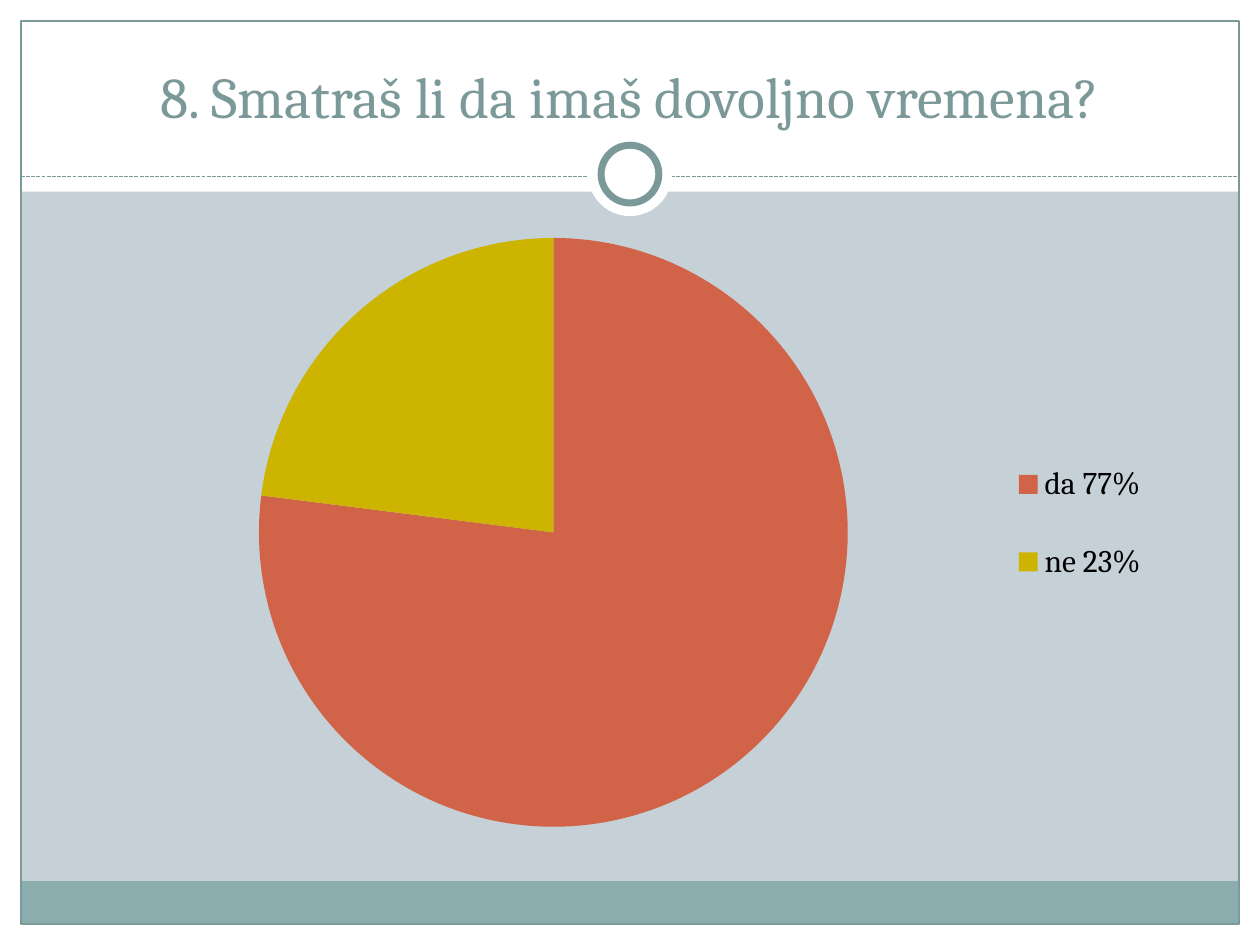
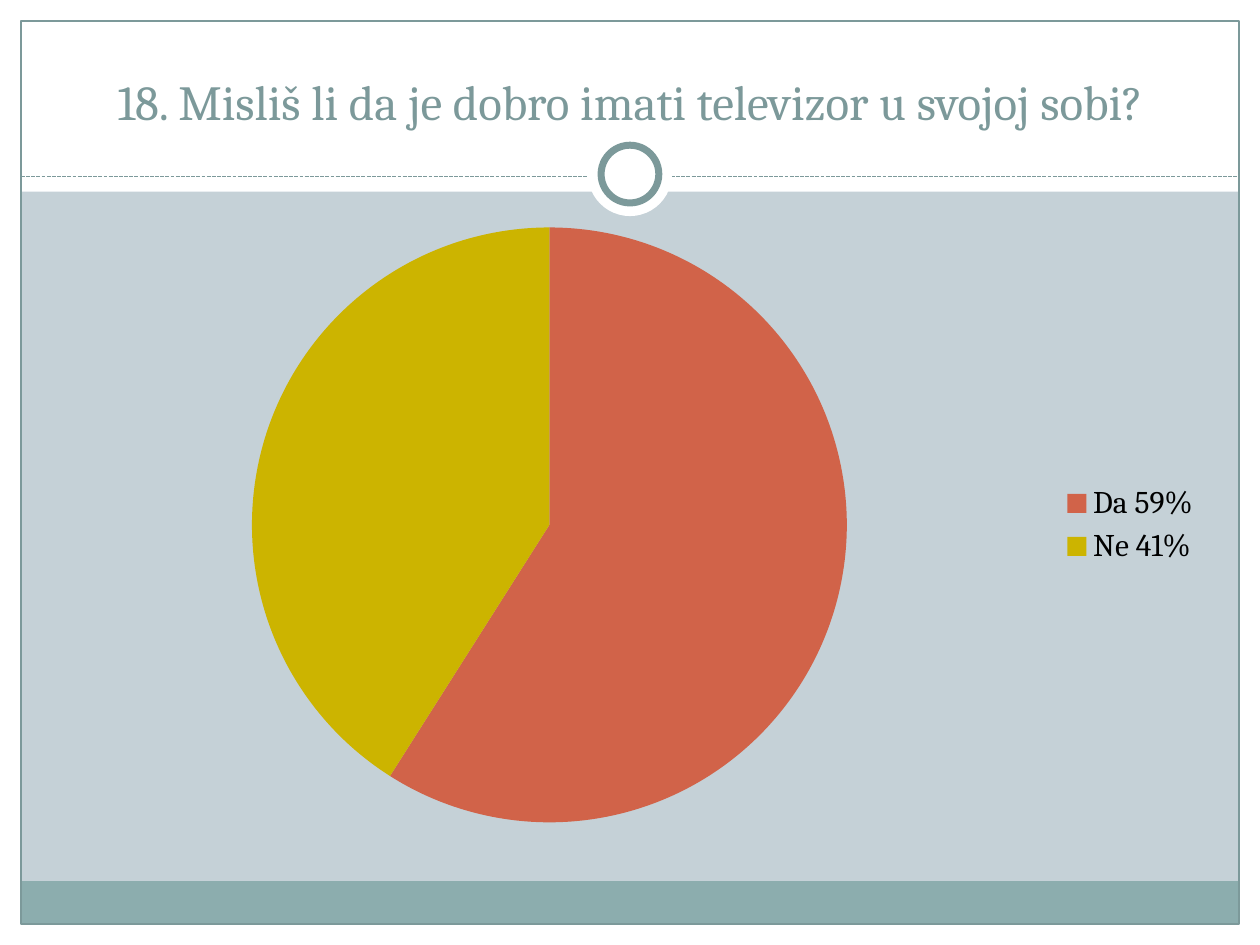
from dataclasses import dataclass
from typing import Optional

from lxml import etree
from pptx import Presentation
from pptx.chart.data import CategoryChartData
from pptx.dml.color import RGBColor
from pptx.enum.chart import XL_CHART_TYPE, XL_LEGEND_POSITION
from pptx.enum.dml import MSO_LINE
from pptx.enum.shapes import MSO_CONNECTOR, MSO_SHAPE
from pptx.enum.text import MSO_ANCHOR, MSO_AUTO_SIZE, PP_ALIGN
from pptx.oxml import parse_xml
from pptx.oxml.ns import nsdecls, qn
from pptx.slide import Slide
from pptx.util import Pt

RECTANGLE = MSO_SHAPE.RECTANGLE
OVAL = MSO_SHAPE.OVAL
STRAIGHT = MSO_CONNECTOR.STRAIGHT
SHORT_DASH = MSO_LINE.SQUARE_DOT
PIE = XL_CHART_TYPE.PIE
RIGHT = XL_LEGEND_POSITION.RIGHT
BOTTOM = MSO_ANCHOR.BOTTOM
CENTER = PP_ALIGN.CENTER
NO_AUTOFIT = MSO_AUTO_SIZE.NONE

BLACK = RGBColor(0x00, 0x00, 0x00)
WHITE = RGBColor(0xFF, 0xFF, 0xFF)
BACKGROUND = RGBColor(0xC5, 0xD1, 0xD7)
BAND = RGBColor(0x8C, 0xAD, 0xAE)
ACCENT = RGBColor(0x7C, 0x99, 0x9A)
SLICE_COLORS = (RGBColor(0xD1, 0x63, 0x49), RGBColor(0xCC, 0xB4, 0x00))

FONT = "Cambria"
WIDTH, HEIGHT = 720, 540
MARGIN = 12
HEADER_HEIGHT = 109.5
RULE_TOP = 101
TITLE_ONLY = 5


@dataclass(frozen=True)
class Area:
    left: float
    top: float
    width: float
    height: float


@dataclass(frozen=True)
class Decoration:
    kind: MSO_SHAPE
    area: Area
    fill: Optional[RGBColor] = None
    line_width: float = 0


@dataclass(frozen=True)
class Question:
    title: str
    title_size: int
    answers: dict[str, int]
    chart: Area
    pie: Area
    legend: Optional[Area] = None


TITLE_AREA = Area(24, 18, 672, 60)
INNER_WIDTH = WIDTH - 2 * MARGIN
INNER_HEIGHT = HEIGHT - 2 * MARGIN

FRAME = (
    Decoration(RECTANGLE, Area(0, HEIGHT - MARGIN, WIDTH, MARGIN), WHITE),
    Decoration(RECTANGLE, Area(0, 0, WIDTH, HEADER_HEIGHT), WHITE),
    Decoration(RECTANGLE, Area(0, 0, MARGIN, HEIGHT), WHITE),
    Decoration(RECTANGLE, Area(WIDTH - MARGIN, 0, MARGIN, HEIGHT), WHITE),
    Decoration(RECTANGLE, Area(MARGIN, 503.5, INNER_WIDTH, 24.5), BAND),
    Decoration(RECTANGLE, Area(MARGIN, MARGIN, INNER_WIDTH, INNER_HEIGHT), None, 0.75),
)
RING = (
    Decoration(OVAL, Area(336, 75.5, 48, 48), WHITE),
    Decoration(OVAL, Area(343.5, 83, 33, 33), WHITE, 4),
)

QUESTIONS = (
    Question(
        "8. Smatraš li da imaš dovoljno vremena?", 33,
        {"da 77%": 77, "ne 23%": 23},
        Area(36, 126, 648, 356.5),
        Area(148, 136, 336.5, 336.5),
        Area(576, 243, 82, 112),
    ),
    Question(
        "18. Misliš li da je dobro imati televizor u svojoj sobi?", 28,
        {"Da 59%": 59, "Ne 41%": 41},
        Area(24, 120, 669.5, 360),
        Area(144, 130, 340, 340),
    ),
)


def points(area: Area) -> tuple[Pt, Pt, Pt, Pt]:
    return Pt(area.left), Pt(area.top), Pt(area.width), Pt(area.height)


def draw_decoration(page: Slide, decoration: Decoration) -> None:
    shape = page.shapes.add_shape(decoration.kind, *points(decoration.area))
    shape.shadow.inherit = False
    if decoration.fill is None:
        shape.fill.background()
    else:
        shape.fill.solid()
        shape.fill.fore_color.rgb = decoration.fill
    if decoration.line_width:
        shape.line.color.rgb = ACCENT
        shape.line.width = Pt(decoration.line_width)
    else:
        shape.line.fill.background()


def draw_rule(page: Slide) -> None:
    rule = page.shapes.add_connector(
        STRAIGHT, Pt(MARGIN), Pt(RULE_TOP), Pt(WIDTH - MARGIN), Pt(RULE_TOP))
    rule.line.color.rgb = ACCENT
    rule.line.width = Pt(0.75)
    rule.line.dash_style = SHORT_DASH
    etree.SubElement(rule.element.spPr, qn("a:effectLst"))


def draw_title(page: Slide, question: Question) -> None:
    title = page.shapes.title
    title.left, title.top, title.width, title.height = points(TITLE_AREA)
    title.element.getparent().append(title.element)
    frame = title.text_frame
    frame.text = question.title
    frame.auto_size = NO_AUTOFIT
    frame.word_wrap = True
    frame.vertical_anchor = BOTTOM
    para = frame.paragraphs[0]
    para.alignment = CENTER
    para.font.name = FONT
    para.font.size = Pt(question.title_size)
    para.font.color.rgb = ACCENT


def manual_layout(chart: Area, part: Area, target: str = "") -> etree._Element:
    fractions = {
        "x": (part.left - chart.left) / chart.width,
        "y": (part.top - chart.top) / chart.height,
        "w": part.width / chart.width,
        "h": part.height / chart.height,
    }
    modes = "".join(f'<c:{axis}Mode val="edge"/>' for axis in "xy")
    sizes = "".join(f'<c:{name} val="{value:.4f}"/>' for name, value in fractions.items())
    return parse_xml(
        f'<c:layout {nsdecls("c")}><c:manualLayout>{target}{modes}{sizes}'
        "</c:manualLayout></c:layout>")


def draw_chart(page: Slide, question: Question) -> None:
    data = CategoryChartData()
    data.categories = list(question.answers)
    data.add_series("Series 1", list(question.answers.values()))
    chart = page.shapes.add_chart(PIE, *points(question.chart), data).chart
    chart.has_title = False
    chart.font.name = FONT
    chart.font.size = Pt(18)
    chart.font.color.rgb = BLACK
    chart.has_legend = True
    chart.legend.position = RIGHT
    chart.legend.include_in_layout = False

    pie = chart.plots[0]
    pie.vary_by_categories = True
    for index, color in enumerate(SLICE_COLORS):
        fill = pie.series[0].points[index].format.fill
        fill.solid()
        fill.fore_color.rgb = color

    plot_area = chart.element.find(".//" + qn("c:plotArea"))
    for layout in plot_area.findall(qn("c:layout")):
        plot_area.remove(layout)
    plot_area.insert(0, manual_layout(
        question.chart, question.pie, '<c:layoutTarget val="inner"/>'))
    if question.legend:
        legend = chart.element.find(".//" + qn("c:legend"))
        for layout in legend.findall(qn("c:layout")):
            legend.remove(layout)
        legend.find(qn("c:legendPos")).addnext(
            manual_layout(question.chart, question.legend))


def main() -> None:
    deck = Presentation()
    deck.slide_width, deck.slide_height = Pt(WIDTH), Pt(HEIGHT)
    for question in QUESTIONS:
        page = deck.slides.add_slide(deck.slide_layouts[TITLE_ONLY])
        page.background.fill.solid()
        page.background.fill.fore_color.rgb = BACKGROUND
        for decoration in FRAME:
            draw_decoration(page, decoration)
        draw_rule(page)
        for decoration in RING:
            draw_decoration(page, decoration)
        draw_title(page, question)
        draw_chart(page, question)
    deck.save("out.pptx")


if __name__ == "__main__":
    main()
